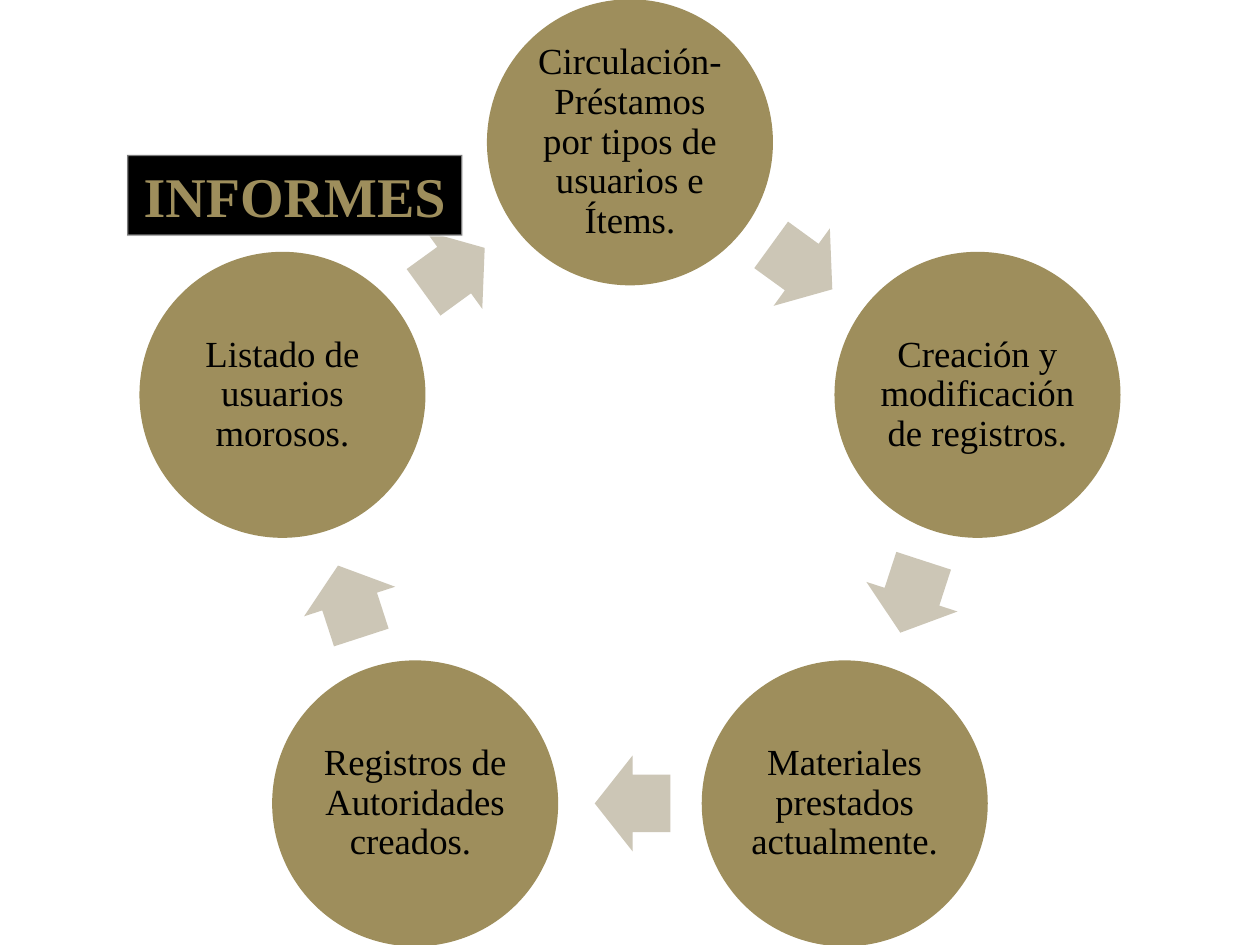
from math import cos, radians, sin

from lxml.etree import SubElement
from pptx import Presentation
from pptx.dml.color import RGBColor
from pptx.enum.shapes import MSO_SHAPE
from pptx.enum.text import MSO_ANCHOR, MSO_AUTO_SIZE, PP_ALIGN
from pptx.oxml.ns import qn
from pptx.util import Inches, Pt

GOLD = RGBColor(0x9E, 0x8E, 0x5C)
SAND = RGBColor(0xCC, 0xC6, 0xB6)
BLACK = RGBColor(0, 0, 0)
PALE = RGBColor(0xF9, 0xF9, 0xF9)

CENTER_X, CENTER_Y, RADIUS = 5, 4.03, 2.9
CIRCLE_SIZE = 2.27
ARROW_LENGTH, ARROW_WIDTH, ARROW_SETBACK = 0.6, 0.76, 0.02

REPORTS = [
    "Circulación- Préstamos por tipos de usuarios e Ítems.",
    "Creación y modificación de registros.",
    "Materiales prestados actualmente.",
    "Registros de Autoridades creados. ",
    "Listado de usuarios morosos.",
]


class ReportCycle:
    """Hold the slide and the style of its cycle of reports."""

    heading_font = {"name": "Times New Roman", "size": Pt(32), "bold": True}
    report_font = {"name": "Times New Roman", "size": Pt(21), "bold": False}
    heading_frame = {
        "word_wrap": False,
        "auto_size": MSO_AUTO_SIZE.NONE,
        "vertical_anchor": MSO_ANCHOR.MIDDLE,
    }
    margins = ("margin_left", "margin_top", "margin_right", "margin_bottom")
    report_frame = {
        "word_wrap": True,
        "vertical_anchor": MSO_ANCHOR.MIDDLE,
        **dict.fromkeys(margins, Inches(0.03)),
    }

    def __init__(self, slide):
        self.slide = slide

    def apply(self, target, values):
        for key, value in values.items():
            setattr(target, key, value)

    def label(self, shape, wording, frame_values, font_values, color):
        frame = shape.text_frame
        frame.text = wording
        self.apply(frame, frame_values)
        paragraph = frame.paragraphs[0]
        paragraph.alignment = PP_ALIGN.CENTER
        self.apply(paragraph.font, font_values)
        paragraph.font.color.rgb = color
        return paragraph

    def preset(self, kind, x, y, width, height, color):
        shape = self.slide.shapes.add_shape(
            kind, Inches(x - width / 2), Inches(y - height / 2),
            Inches(width), Inches(height))
        shape.shadow.inherit = False
        shape.fill.solid()
        shape.fill.fore_color.rgb = color
        shape.line.fill.background()
        return shape

    def circle(self, x, y, wording):
        disc = self.preset(MSO_SHAPE.OVAL, x, y, CIRCLE_SIZE, CIRCLE_SIZE, GOLD)
        paragraph = self.label(
            disc, wording, self.report_frame, self.report_font, BLACK)
        paragraph.line_spacing = 0.9

    def arrow(self, x, y, rotation):
        arrow = self.preset(
            MSO_SHAPE.RIGHT_ARROW, x, y, ARROW_LENGTH, ARROW_WIDTH, SAND)
        arrow.adjustments[0] = 0.6
        arrow.adjustments[1] = 0.5
        arrow.rotation = rotation

    def heading(self, wording, left, top, width, height):
        title = self.slide.shapes.title
        self.apply(title, {
            "left": Inches(left), "top": Inches(top),
            "width": Inches(width), "height": Inches(height),
        })
        self.label(title, wording, self.heading_frame, self.heading_font, GOLD)
        title.fill.solid()
        title.fill.fore_color.rgb = BLACK
        title.line.color.rgb = PALE
        title.line.width = Pt(1.35)
        line_color = title.element.spPr.find(
            qn("a:ln")).find(".//" + qn("a:srgbClr"))
        SubElement(line_color, qn("a:alpha"), val="50000")
        self.slide.shapes.element.append(title.element)


def cycle_point(angle, radius):
    return (CENTER_X + radius * sin(radians(angle)),
            CENTER_Y - radius * cos(radians(angle)))


def main():
    deck = Presentation()
    deck.slide_width, deck.slide_height = Inches(10), Inches(7.5)
    cycle = ReportCycle(deck.slides.add_slide(deck.slide_layouts[5]))
    step = 360 / len(REPORTS)
    for index, report in enumerate(REPORTS):
        angle = index * step
        direction = angle + step / 2
        cycle.circle(*cycle_point(angle, RADIUS), report)
        x, y = cycle_point(direction, RADIUS * cos(radians(step / 2)))
        cycle.arrow(x - ARROW_SETBACK * cos(radians(direction)),
                    y - ARROW_SETBACK * sin(radians(direction)), direction)
    cycle.heading("INFORMES", 1.01, 1.23, 2.66, 0.64)
    deck.save("out.pptx")


if __name__ == "__main__":
    main()
